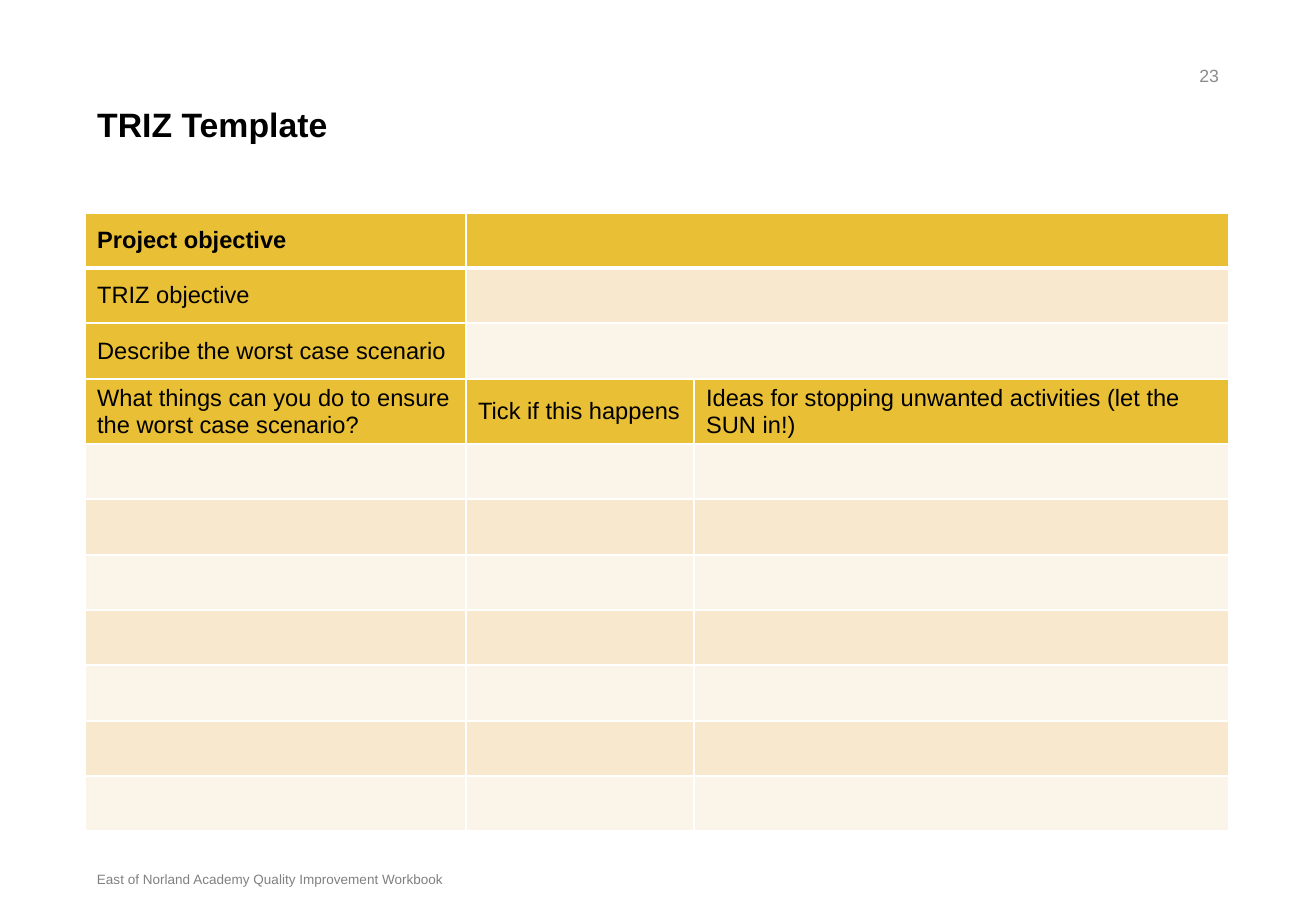
from lxml import etree
from pptx import Presentation
from pptx.dml.color import RGBColor
from pptx.enum.text import MSO_ANCHOR as Anchor, MSO_AUTO_SIZE as Fit, PP_ALIGN as Align
from pptx.oxml.ns import qn
from pptx.util import Pt

PX = 7526
GOLD, SAND, CREAM = "E9BF35", "F7E8CE", "FBF4E8"
rgb = RGBColor.from_string


def write(frame, text, size, color="000000", bold=False, anchor=Anchor.MIDDLE, align=Align.LEFT):
    frame.word_wrap = True
    frame.vertical_anchor = anchor
    para = frame.paragraphs[0]
    para.alignment = align
    run = para.add_run()
    run.text = text
    font = run.font
    font.name, font.size, font.bold = "Arial", Pt(size), bold
    font.color.rgb = rgb(color)
    return para


def edge(cell, side, width):
    """Draw a white border on one side of a cell."""
    line = etree.SubElement(cell._tc.get_or_add_tcPr(), qn("a:ln" + side), w=str(Pt(width)))
    fill = etree.SubElement(line, qn("a:solidFill"))
    etree.SubElement(fill, qn("a:srgbClr"), val="FFFFFF")


deck = Presentation()
deck.slide_width, deck.slide_height = 1316 * PX, 911 * PX
slide = deck.slides.add_slide(deck.slide_layouts[5])

# Title
title = slide.shapes.title
title.left, title.top, title.width, title.height = [n * PX for n in (85, 102, 1146, 94)]
frame = title.text_frame
frame.auto_size = Fit.NONE
write(frame, "TRIZ Template", 20, bold=True, anchor=Anchor.TOP).line_spacing = 0.9

# Table
labels = [
    ["Project objective"],
    ["TRIZ objective"],
    ["Describe the worst case scenario"],
    ["What things can you do to ensure the worst case scenario?",
     "Tick if this happens",
     "Ideas for stopping unwanted activities (let the SUN in!)"],
]
widths = [381, 228, 535]
heights = [55, 55, 56, 65, 55, 56, 55, 55, 56, 55, 55]
table = slide.shapes.add_table(
    len(heights), len(widths), 85 * PX, 213 * PX, sum(widths) * PX, sum(heights) * PX).table
for col, width in zip(table.columns, widths):
    col.width = width * PX

for r, height in enumerate(heights):
    table.rows[r].height = height * PX
    texts = labels[r] if r < len(labels) else []
    for c in range(len(widths)):
        cell = table.cell(r, c)
        for side in "LRTB":
            thick = (r, side) in [(0, "B"), (1, "T")]
            edge(cell, side, 3 if thick else 1)
        head = r in (0, 3) or c < len(texts)
        cell.fill.solid()
        cell.fill.fore_color.rgb = rgb(GOLD if head else SAND if r % 2 else CREAM)
        if c < len(texts):
            write(cell.text_frame, texts[c], 14, bold=r == 0)
            cell.vertical_anchor = Anchor.MIDDLE
    if len(texts) == 1:
        table.cell(r, 1).merge(table.cell(r, 2))

# Page number and footer
notes = [
    ((947, 51, 284, 49), "23", 10.5, "8C8C8C", Anchor.MIDDLE, Align.RIGHT),
    ((85, 844, 818, 49), "East of Norland Academy Quality Improvement Workbook",
     8, "808080", Anchor.BOTTOM, Align.LEFT),
]
for place, text, size, color, anchor, align in notes:
    box = slide.shapes.add_textbox(*[n * PX for n in place])
    write(box.text_frame, text, size, color, anchor=anchor, align=align)

deck.save("out.pptx")
